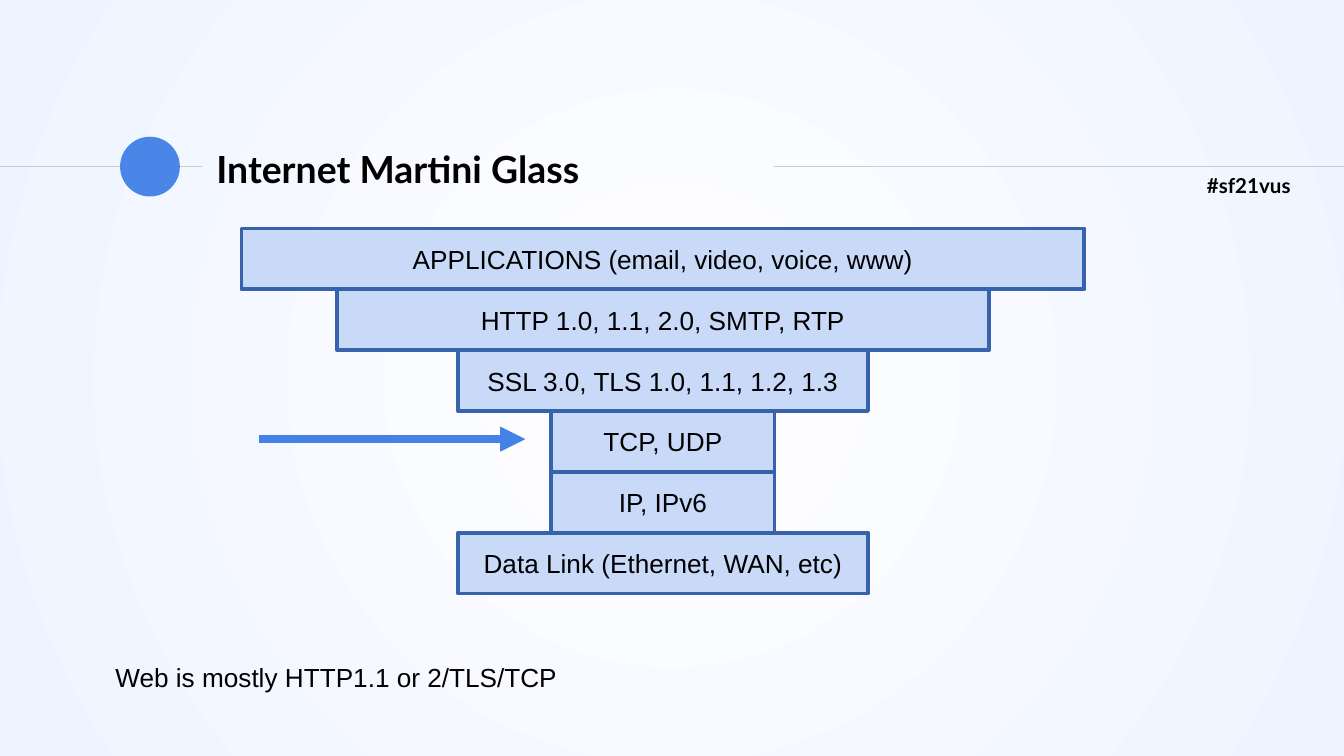
from typing import NamedTuple

import pptx
import pptx.dml.color
import pptx.enum.shapes
import pptx.enum.text
import pptx.oxml
import pptx.oxml.ns
import pptx.util
from pptx.util import Cm

NS = pptx.oxml.ns.nsdecls("a")
CENTER_X = 12.53
STACK_TOP = 4.32
LAYER_H = 1.15
RULE_Y = 3.15


class Layer(NamedTuple):
    text: str
    width: float


class Label(NamedTuple):
    text: str
    left: float
    top: float
    width: float
    height: float
    size: int
    font: str
    bold: bool
    wrap: bool


class Line(NamedTuple):
    x1: float
    x2: float
    y: float
    color: str
    weight: float
    arrow: bool = False


LAYERS = [
    Layer("APPLICATIONS (email, video, voice, www)", 15.93),
    Layer("HTTP 1.0, 1.1, 2.0, SMTP, RTP", 12.32),
    Layer("SSL 3.0, TLS 1.0, 1.1, 1.2, 1.3", 7.75),
    Layer("TCP, UDP", 4.22),
    Layer("IP, IPv6", 4.22),
    Layer("Data Link (Ethernet, WAN, etc)", 7.75),
]
LABELS = [
    Label("#sf21vus", 22.56, 3, 2.84, 0.99, 11, "Lato", True, True),
    Label("Internet Martini Glass", 3.84, 2.57, 11.28, 1.22, 20, "Lato", True, True),
    Label("Web is mostly HTTP1.1 or 2/TLS/TCP", 1.93, 12.37, 9.07, 0.86, 14, "Arial", False, False),
]
RULES = [Line(0, 3.81, RULE_Y, "CCCCCC", 0.75), Line(14.63, 25.4, RULE_Y, "CCCCCC", 0.75)]
ARROW = Line(4.9, 9.93, 8.3, "4582E7", 4.5, arrow=True)


def rgb(value: str) -> pptx.dml.color.RGBColor:
    return pptx.dml.color.RGBColor.from_string(value)


def set_background(s, inner: str, outer: str) -> None:
    """Fill the slide with a circular gradient spreading from its centre."""
    fill = s.background.fill
    fill.gradient()
    for stop, color in zip(fill.gradient_stops, (inner, outer)):
        stop.color.rgb = rgb(color)
    lin = s._element.find(".//" + pptx.oxml.ns.qn("a:lin"))
    path = pptx.oxml.parse_xml(
        f'<a:path {NS} path="circle">'
        '<a:fillToRect l="50000" t="50000" r="50000" b="50000"/></a:path>'
    )
    lin.getparent().replace(lin, path)


def set_text(tf, text: str, size: int, font: str, bold: bool = False) -> None:
    tf.text = text
    tf.vertical_anchor = pptx.enum.text.MSO_ANCHOR.MIDDLE
    f = tf.paragraphs[0].runs[0].font
    f.size, f.name, f.bold = pptx.util.Pt(size), font, bold
    f.color.rgb = rgb("000000")


def add_label(s, label: Label) -> None:
    box = s.shapes.add_textbox(Cm(label.left), Cm(label.top), Cm(label.width), Cm(label.height))
    tf = box.text_frame
    tf.word_wrap = label.wrap
    if label.wrap:
        tf.margin_top = tf.margin_bottom = Cm(0.25)
    set_text(tf, label.text, label.size, label.font, label.bold)


def add_line(s, line: Line) -> None:
    c = s.shapes.add_connector(
        pptx.enum.shapes.MSO_CONNECTOR.STRAIGHT, Cm(line.x1), Cm(line.y), Cm(line.x2), Cm(line.y)
    )
    c.line.color.rgb = rgb(line.color)
    c.line.width = pptx.util.Pt(line.weight)
    if line.arrow:
        c.line._get_or_add_ln().append(pptx.oxml.parse_xml(f'<a:tailEnd {NS} type="triangle"/>'))
    c._element.spPr.append(pptx.oxml.parse_xml(f"<a:effectLst {NS}/>"))


def add_dot(s) -> None:
    d = 1.13
    sp = s.shapes.add_shape(
        pptx.enum.shapes.MSO_SHAPE.OVAL, Cm(2.27), Cm(RULE_Y - d / 2), Cm(d), Cm(d)
    )
    sp.shadow.inherit = False
    sp.fill.solid()
    sp.fill.fore_color.rgb = rgb("4A86E8")
    sp.line.fill.background()


def add_layer(s, layer: Layer, row: int) -> None:
    sp = s.shapes.add_shape(
        pptx.enum.shapes.MSO_SHAPE.RECTANGLE,
        Cm(CENTER_X - layer.width / 2), Cm(STACK_TOP + row * LAYER_H),
        Cm(layer.width), Cm(LAYER_H),
    )
    sp.shadow.inherit = False
    sp.fill.solid()
    sp.fill.fore_color.rgb = rgb("C9DAF8")
    sp.line.color.rgb = rgb("3763AC")
    sp.line.width = pptx.util.Pt(2)
    set_text(sp.text_frame, layer.text, 14, "Arial")
    sp.text_frame.paragraphs[0].alignment = pptx.enum.text.PP_ALIGN.CENTER


def main() -> None:
    prs = pptx.Presentation()
    prs.slide_width, prs.slide_height = Cm(25.4), Cm(14.29)
    s = prs.slides.add_slide(prs.slide_layouts[6])
    set_background(s, "FFFFFF", "EEF4FF")
    for rule in RULES:
        add_line(s, rule)
    add_dot(s)
    for row, layer in enumerate(LAYERS):
        add_layer(s, layer, row)
    add_line(s, ARROW)
    for label in LABELS:
        add_label(s, label)
    prs.save("out.pptx")


if __name__ == "__main__":
    main()
